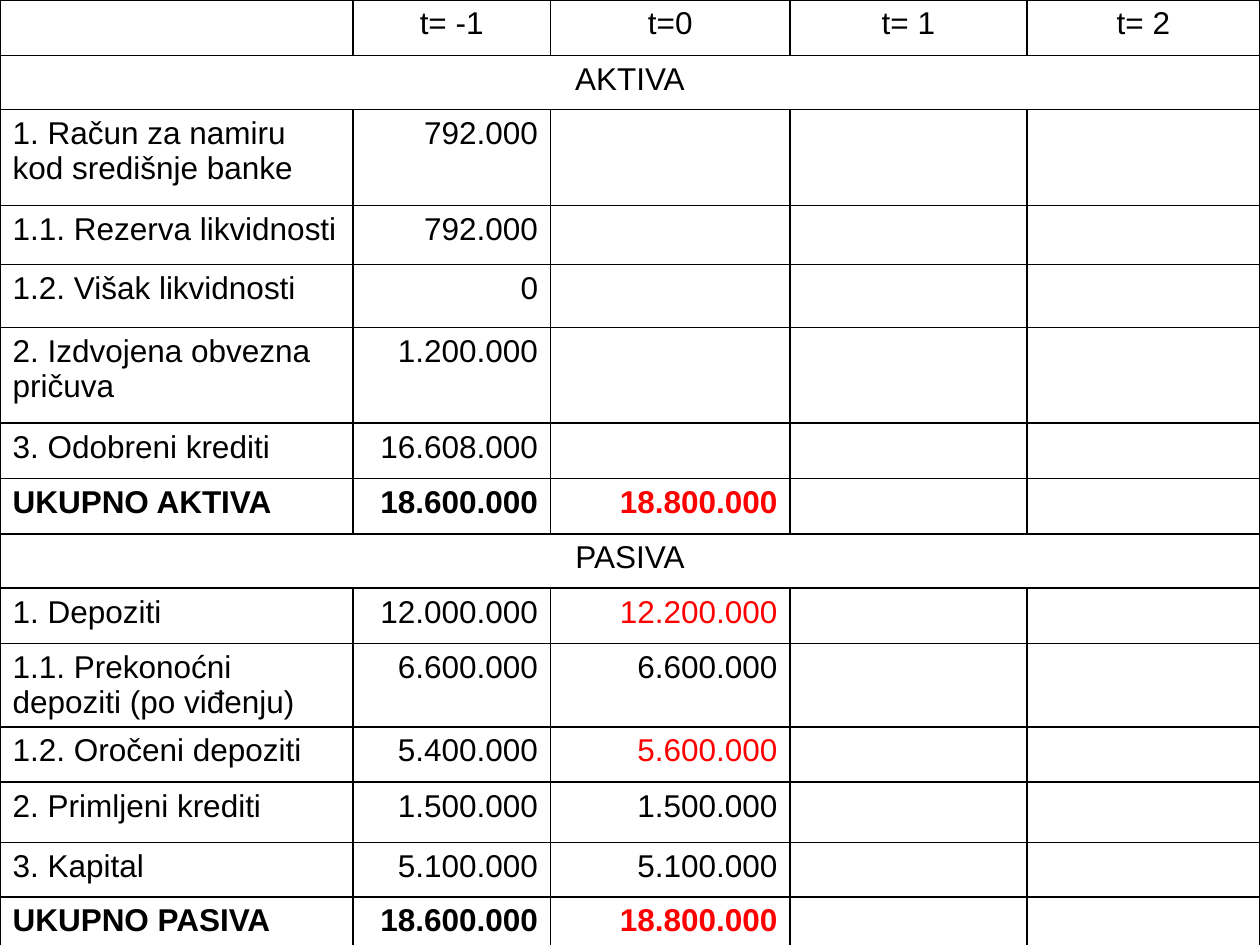
from dataclasses import dataclass

from lxml import etree
from pptx import Presentation
from pptx.dml.color import RGBColor
from pptx.enum.text import PP_ALIGN
from pptx.oxml.ns import qn
from pptx.util import Inches, Pt

LEFT, CENTER, RIGHT, JUSTIFY = PP_ALIGN.LEFT, PP_ALIGN.CENTER, PP_ALIGN.RIGHT, PP_ALIGN.JUSTIFY


@dataclass(frozen=True)
class Theme:
    font: str = "Arial"
    size: int = 18
    text: str = "000000"
    changed: str = "FF0000"
    border: str = "000000"
    border_width: int = 1


theme = Theme()

COL_WIDTHS = [2.8, 1.57, 1.9, 1.88, 1.85]

# Row height and the filled cells from the left
ROWS = [
    (0.44, ["", "t= -1", "t=0", "t= 1", "t= 2"]),
    (0.43, ["AKTIVA"]),
    (0.76, ["1. Račun za namiru kod središnje banke", "792.000"]),
    (0.47, ["1.1. Rezerva likvidnosti", "792.000"]),
    (0.5, ["1.2. Višak likvidnosti", "0"]),
    (0.76, ["2. Izdvojena obvezna pričuva", "1.200.000"]),
    (0.44, ["3. Odobreni krediti", "16.608.000"]),
    (0.44, ["UKUPNO AKTIVA", "18.600.000", "18.800.000"]),
    (0.43, ["PASIVA"]),
    (0.44, ["1. Depoziti", "12.000.000", "12.200.000"]),
    (0.4, ["1.1. Prekonoćni depoziti (po viđenju)", "6.600.000", "6.600.000"]),
    (0.44, ["1.2. Oročeni depoziti", "5.400.000", "5.600.000"]),
    (0.48, ["2. Primljeni krediti", "1.500.000", "1.500.000"]),
    (0.43, ["3. Kapital", "5.100.000", "5.100.000"]),
    (0.44, ["UKUPNO PASIVA", "18.600.000", "18.800.000"]),
]
JUSTIFIED = ("3. Kapital", "UKUPNO PASIVA")


def add_borders(cell):
    tc_pr = cell._tc.get_or_add_tcPr()
    for side in ("lnL", "lnR", "lnT", "lnB"):
        ln = etree.SubElement(tc_pr, qn(f"a:{side}"), w=str(Pt(theme.border_width)))
        fill = etree.SubElement(ln, qn("a:solidFill"))
        etree.SubElement(fill, qn("a:srgbClr"), val=theme.border)


def write_cell(cell, text, align, color, bold):
    p = cell.text_frame.paragraphs[0]
    p.alignment = align
    r = p.add_run()
    r.text = text
    font_format = {"name": theme.font, "size": Pt(theme.size), "bold": bold}
    for name, value in font_format.items():
        setattr(r.font, name, value)
    r.font.color.rgb = RGBColor.from_string(color)


# Slide
prs = Presentation()
prs.slide_width, prs.slide_height = Inches(10), Inches(7.5)
s = prs.slides.add_slide(prs.slide_layouts[6])

# Balance sheet table
height = sum(h for h, _ in ROWS)
table = s.shapes.add_table(len(ROWS), len(COL_WIDTHS), Inches(0), Inches(0),
                           Inches(10), Inches(height)).table
table.first_row = table.horz_banding = False
for column, width in zip(table.columns, COL_WIDTHS):
    column.width = Inches(width)

cell_format = {"margin_left": Inches(0.1), "margin_right": Inches(0.1),
               "margin_top": Inches(0.05), "margin_bottom": Inches(0.05)}

for i, (row_height, values) in enumerate(ROWS):
    table.rows[i].height = Inches(row_height)
    label = values[0]
    is_section = len(values) == 1

    # Borders, margins and no fill
    for cell in table.rows[i].cells:
        add_borders(cell)
        cell.fill.background()
        for name, value in cell_format.items():
            setattr(cell, name, value)
    if is_section:
        table.cell(i, 0).merge(table.cell(i, len(COL_WIDTHS) - 1))

    # Text: amounts that differ from t= -1 are highlighted
    for j, text in enumerate(values):
        if not text:
            continue
        if i == 0 or is_section:
            align = CENTER
        elif j > 0:
            align = RIGHT
        else:
            align = JUSTIFY if label in JUSTIFIED else LEFT
        changed = i > 0 and j == 2 and text != values[1]
        write_cell(table.cell(i, j), text, align,
                   theme.changed if changed else theme.text,
                   label.startswith("UKUPNO"))

prs.save("out.pptx")
